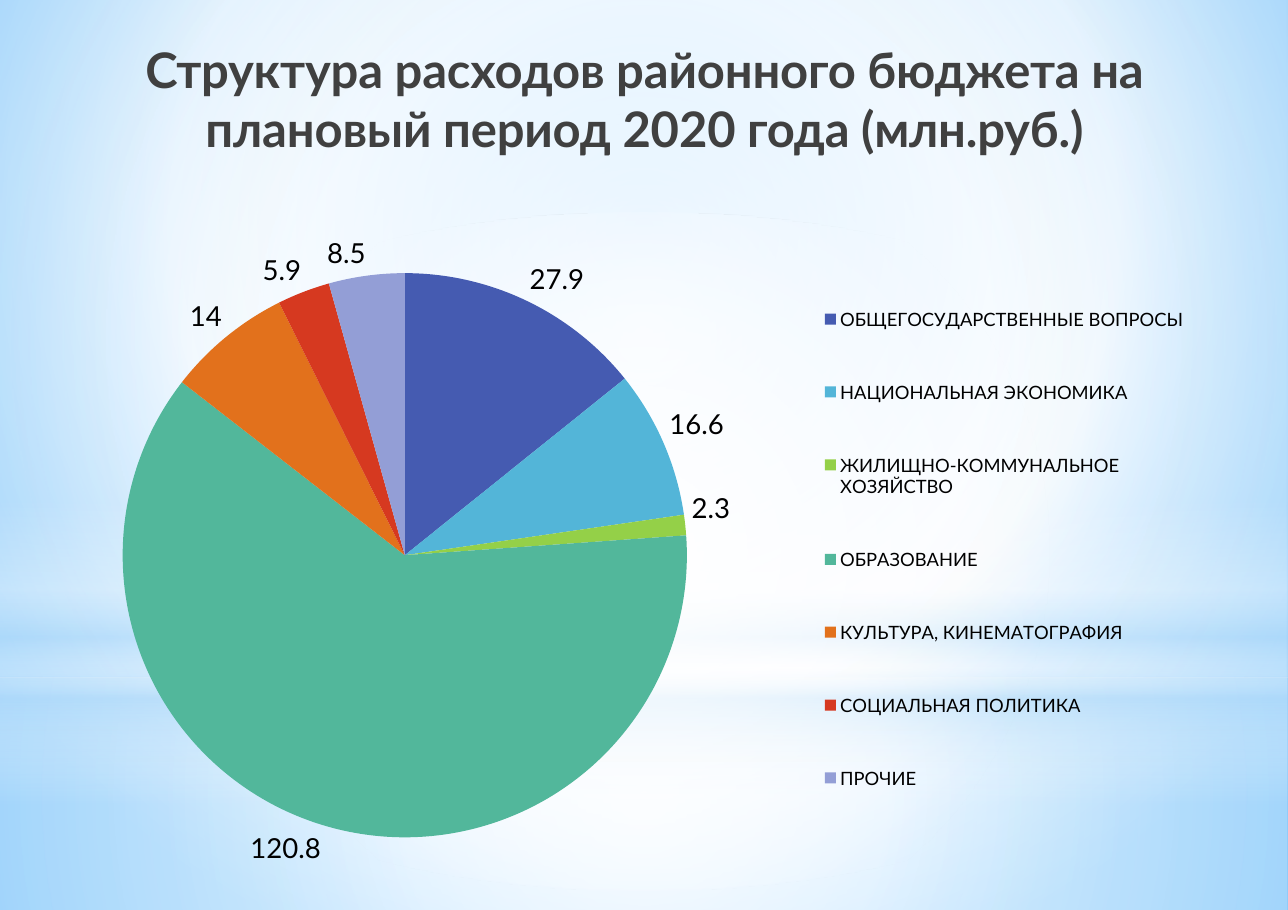
from dataclasses import dataclass
from typing import Optional

import pptx
import pptx.chart.data
import pptx.dml.color
import pptx.enum.chart
import pptx.enum.shapes
import pptx.enum.text
import pptx.oxml
import pptx.oxml.ns
import pptx.util

Pt = pptx.util.Pt
RGBColor = pptx.dml.color.RGBColor
MSO_SHAPE = pptx.enum.shapes.MSO_SHAPE
qn = pptx.oxml.ns.qn

WHITE = RGBColor(0xFF, 0xFF, 0xFF)
PALE_BLUE = RGBColor(0xB4, 0xDC, 0xFA)
SKY = RGBColor(0x9E, 0xD5, 0xFF)
AZURE = RGBColor(0x5B, 0xB9, 0xFF)
DARK_GREY = RGBColor(0x40, 0x40, 0x40)
BLACK = RGBColor(0, 0, 0)
FONT = "Lato"
WIDTH, HEIGHT = 841.68, 594.72
CENTRE = (50, 50, 50, 50)
TITLE = "Структура расходов районного бюджета на плановый период 2020 года (млн.руб.)"


@dataclass
class Stop:
    position: int
    color: RGBColor
    opacity: int = 100


@dataclass
class Glow:
    kind: MSO_SHAPE
    top: float
    height: float
    stops: list[Stop]
    focus: Optional[tuple[int, int, int, int]] = CENTRE


@dataclass
class Expense:
    name: str
    amount: float
    color: RGBColor


GLOWS = [
    Glow(MSO_SHAPE.RECTANGLE, 442.8, 151.92,
         [Stop(0, WHITE, 91), Stop(37, WHITE, 76), Stop(100, PALE_BLUE, 79)]),
    Glow(MSO_SHAPE.RECTANGLE, 0, 442.8,
         [Stop(0, WHITE, 89), Stop(48, WHITE, 62), Stop(100, PALE_BLUE, 79)]),
    Glow(MSO_SHAPE.RECTANGLE, 326.88, 198,
         [Stop(0, WHITE, 0), Stop(29, WHITE, 30), Stop(45, PALE_BLUE, 40),
          Stop(55, WHITE, 26), Stop(65, PALE_BLUE, 60), Stop(100, WHITE, 0)], None),
    Glow(MSO_SHAPE.OVAL, 138.96, 442.8, [Stop(0, WHITE), Stop(56, WHITE, 0)]),
]
EXPENSES = [
    Expense("ОБЩЕГОСУДАРСТВЕННЫЕ ВОПРОСЫ", 27.9, RGBColor(0x45, 0x5B, 0xB1)),
    Expense("НАЦИОНАЛЬНАЯ ЭКОНОМИКА", 16.6, RGBColor(0x53, 0xB5, 0xD8)),
    Expense("ЖИЛИЩНО-КОММУНАЛЬНОЕ ХОЗЯЙСТВО", 2.3, RGBColor(0x94, 0xD0, 0x48)),
    Expense("ОБРАЗОВАНИЕ", 120.8, RGBColor(0x52, 0xB7, 0x9B)),
    Expense("КУЛЬТУРА, КИНЕМАТОГРАФИЯ", 14, RGBColor(0xE2, 0x71, 0x1C)),
    Expense("СОЦИАЛЬНАЯ ПОЛИТИКА", 5.9, RGBColor(0xD6, 0x39, 0x20)),
    Expense("ПРОЧИЕ", 8.5, RGBColor(0x93, 0x9E, 0xD6)),
]


def set_format(target, values: dict) -> None:
    for name, value in values.items():
        setattr(target, name, value)


def set_font(font, size: float, color: RGBColor, bold: bool = False) -> None:
    set_format(font, {"name": FONT, "size": Pt(size), "bold": bold})
    font.color.rgb = color


def gradient(stops: list[Stop], focus: Optional[tuple[int, int, int, int]]):
    """Return a gradFill: circular around focus, or top to bottom without one."""
    marks = "".join(
        f'<a:gs pos="{s.position * 1000}"><a:srgbClr val="{s.color}">'
        f'<a:alpha val="{s.opacity * 1000}"/></a:srgbClr></a:gs>' for s in stops)
    if focus:
        left, top, right, bottom = (v * 1000 for v in focus)
        course = (f'<a:path path="circle"><a:fillToRect l="{left}" t="{top}" '
                  f'r="{right}" b="{bottom}"/></a:path>')
    else:
        course = '<a:lin ang="5400000" scaled="0"/>'
    return pptx.oxml.parse_xml(
        f'<a:gradFill {pptx.oxml.ns.nsdecls("a")} rotWithShape="1">'
        f'<a:gsLst>{marks}</a:gsLst>{course}</a:gradFill>')


def swap_solid_fill(parent, grad) -> None:
    parent.replace(parent.find(qn("a:solidFill")), grad)


def draw_background(s) -> None:
    s.background.fill.solid()
    stops = [Stop(0, SKY), Stop(60, WHITE), Stop(100, AZURE)]
    swap_solid_fill(s._element.find(".//" + qn("p:bgPr")),
                    gradient(stops, (20, 10, 20, 60)))


def draw_glow(s, glow: Glow) -> None:
    sp = s.shapes.add_shape(glow.kind, 0, Pt(glow.top), Pt(WIDTH), Pt(glow.height))
    sp.shadow.inherit = False
    sp.line.fill.background()
    sp.fill.solid()
    swap_solid_fill(sp._element.spPr, gradient(glow.stops, glow.focus))


def draw_title(s) -> None:
    sp = s.shapes.add_textbox(Pt(25.2), Pt(21.6), Pt(792), Pt(90))
    tf = sp.text_frame
    set_format(tf, {
        "word_wrap": True, "vertical_anchor": pptx.enum.text.MSO_ANCHOR.TOP,
        "margin_left": Pt(7.92), "margin_right": Pt(7.92),
        "margin_top": Pt(4.32), "margin_bottom": Pt(4.32)})
    p = tf.paragraphs[0]
    p.alignment = pptx.enum.text.PP_ALIGN.CENTER
    r = p.add_run()
    r.text = TITLE
    set_font(r.font, 32, DARK_GREY, bold=True)
    r.font._element.set("spc", "-15")


def place(element, following: str, x: float, y: float, w: float, h: float,
          inner: bool = False) -> None:
    """Fix a chart part at fractions of the chart area, before the named child."""
    for old in element.findall(qn("c:layout")):
        element.remove(old)
    target = '<c:layoutTarget val="inner"/>' if inner else ""
    layout = pptx.oxml.parse_xml(
        f'<c:layout {pptx.oxml.ns.nsdecls("c")}><c:manualLayout>{target}'
        f'<c:xMode val="edge"/><c:yMode val="edge"/><c:x val="{x}"/><c:y val="{y}"/>'
        f'<c:w val="{w}"/><c:h val="{h}"/></c:manualLayout></c:layout>')
    element.find(qn(following)).addprevious(layout)


def draw_chart(s) -> None:
    data = pptx.chart.data.CategoryChartData()
    data.categories = [e.name for e in EXPENSES]
    data.add_series("Расходы", [e.amount for e in EXPENSES])
    chart = s.shapes.add_chart(
        pptx.enum.chart.XL_CHART_TYPE.PIE,
        Pt(18.72), Pt(141.84), Pt(768.24), Pt(437.76), data).chart
    set_format(chart, {"has_title": False, "has_legend": True})
    set_font(chart.font, 18, BLACK)
    set_format(chart.legend, {
        "position": pptx.enum.chart.XL_LEGEND_POSITION.RIGHT,
        "include_in_layout": False})
    set_font(chart.legend.font, 12, BLACK)

    plot = chart.plots[0]
    set_format(plot, {"vary_by_categories": True, "has_data_labels": True})
    set_format(plot.data_labels, {
        "show_value": True, "number_format": "General",
        "number_format_is_linked": False,
        "position": pptx.enum.chart.XL_LABEL_POSITION.OUTSIDE_END})
    set_font(plot.data_labels.font, 18, BLACK)
    for i, expense in enumerate(EXPENSES):
        fill = plot.series[0].points[i].format.fill
        fill.solid()
        fill.fore_color.rgb = expense.color

    area = chart._chartSpace.find(".//" + qn("c:plotArea"))
    place(area, "c:pieChart", 0.08, 0.08, 0.48, 0.85, inner=True)
    place(chart.legend._element, "c:overlay", 0.67, 0.06, 0.32, 0.87)


def main() -> None:
    prs = pptx.Presentation()
    set_format(prs, {"slide_width": Pt(WIDTH), "slide_height": Pt(HEIGHT)})
    s = prs.slides.add_slide(prs.slide_layouts[6])
    draw_background(s)
    for glow in GLOWS:
        draw_glow(s, glow)
    draw_title(s)
    draw_chart(s)
    prs.save("out.pptx")


if __name__ == "__main__":
    main()
